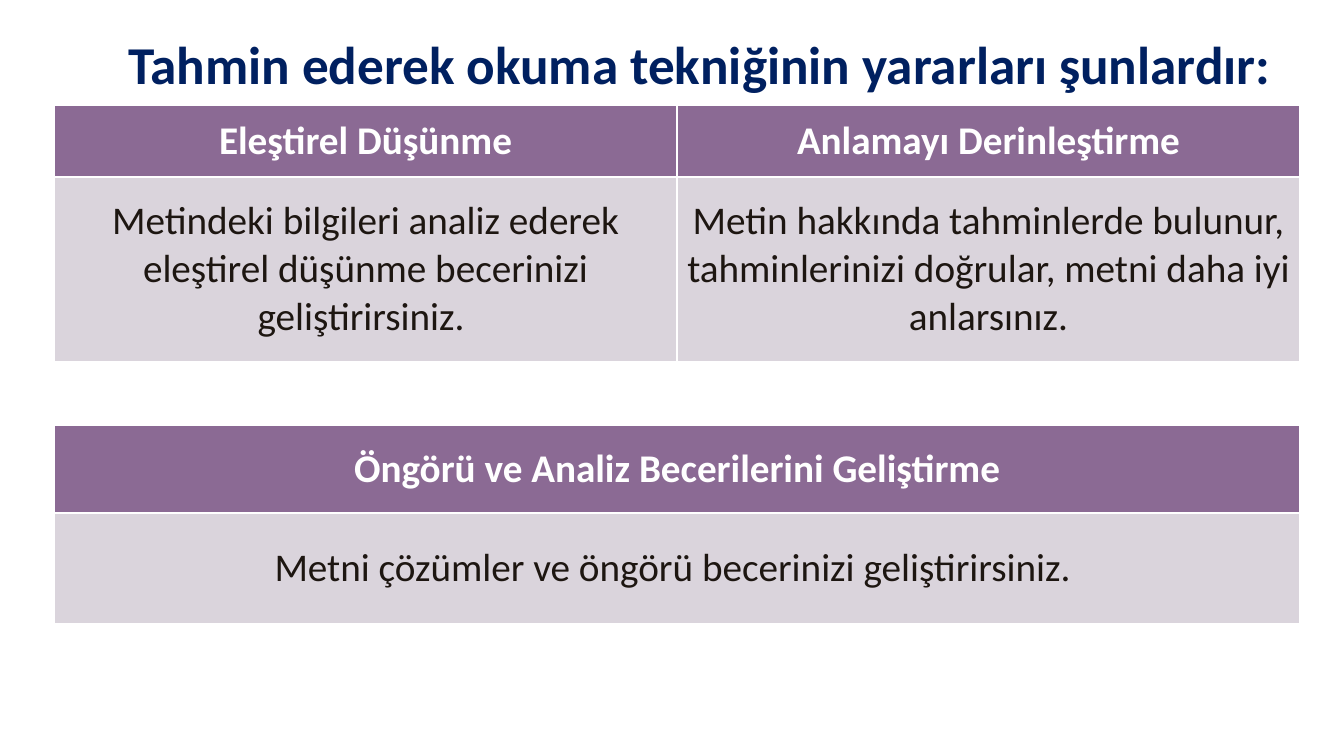
"""Build a slide on the benefits of predictive reading, with two tables."""
from pptx import Presentation
from pptx.dml.color import RGBColor
from pptx.enum.text import MSO_ANCHOR, MSO_AUTO_SIZE, PP_ALIGN
from pptx.util import Emu, Pt

PX_PER_INCH = 100.8
FONT = "Calibri"
NAVY = RGBColor(0x00, 0x20, 0x60)
PURPLE = RGBColor(0x8B, 0x6A, 0x94)
LILAC = RGBColor(0xDA, 0xD4, 0xDC)
WHITE = RGBColor(0xFF, 0xFF, 0xFF)
INK = RGBColor(0x1D, 0x16, 0x11)

TITLE = "Tahmin ederek okuma tekniğinin yararları şunlardır:"
READING_BENEFITS = [
    ("Eleştirel Düşünme",
     "Metindeki bilgileri analiz ederek eleştirel düşünme becerinizi geliştirirsiniz. "),
    ("Anlamayı Derinleştirme",
     "Metin hakkında tahminlerde bulunur, tahminlerinizi doğrular, metni daha iyi anlarsınız."),
]
FORESIGHT_BENEFITS = [
    ("Öngörü ve Analiz Becerilerini Geliştirme",
     "Metni çözümler ve öngörü becerinizi geliştirirsiniz. "),
]


def px(length):
    return Emu(round(length * 914400 / PX_PER_INCH))


def style_paragraph(paragraph, size, color, bold):
    paragraph.alignment = PP_ALIGN.CENTER
    font = paragraph.font
    font.name = FONT
    font.size = Pt(size)
    font.bold = bold
    font.color.rgb = color


def add_title(slide, left, top, width, height):
    title = slide.shapes.title
    title.left, title.top = px(left), px(top)
    title.width, title.height = px(width), px(height)
    frame = title.text_frame
    frame.text = TITLE
    frame.word_wrap = True
    frame.auto_size = MSO_AUTO_SIZE.NONE
    frame.vertical_anchor = MSO_ANCHOR.BOTTOM
    frame.margin_left = frame.margin_right = px(13)
    frame.margin_top = frame.margin_bottom = px(7)
    paragraph = frame.paragraphs[0]
    paragraph.line_spacing = 0.85
    style_paragraph(paragraph, 38, NAVY, True)


def add_benefit_table(slide, left, top, width, row_heights, benefits):
    table = slide.shapes.add_table(
        len(row_heights), len(benefits),
        px(left), px(top), px(width), px(sum(row_heights))).table
    table.horz_banding = False
    for row, height in zip(table.rows, row_heights):
        row.height = px(height)
    for column, texts in enumerate(benefits):
        table.columns[column].width = px(width / len(benefits))
        for row, text in enumerate(texts):
            is_heading = row == 0
            cell = table.cell(row, column)
            cell.text = text
            cell.vertical_anchor = MSO_ANCHOR.MIDDLE
            cell.fill.solid()
            cell.fill.fore_color.rgb = PURPLE if is_heading else LILAC
            style_paragraph(cell.text_frame.paragraphs[0], 28,
                            WHITE if is_heading else INK, is_heading)


def main():
    presentation = Presentation()
    presentation.slide_width, presentation.slide_height = px(1344), px(756)
    slide = presentation.slides.add_slide(presentation.slide_layouts[5])
    add_title(slide, 101, 36, 1198, 66)
    add_benefit_table(slide, 54, 105, 1246, (72, 185), READING_BENEFITS)
    add_benefit_table(slide, 54, 425, 1246, (88, 111), FORESIGHT_BENEFITS)
    presentation.save("out.pptx")


if __name__ == "__main__":
    main()
